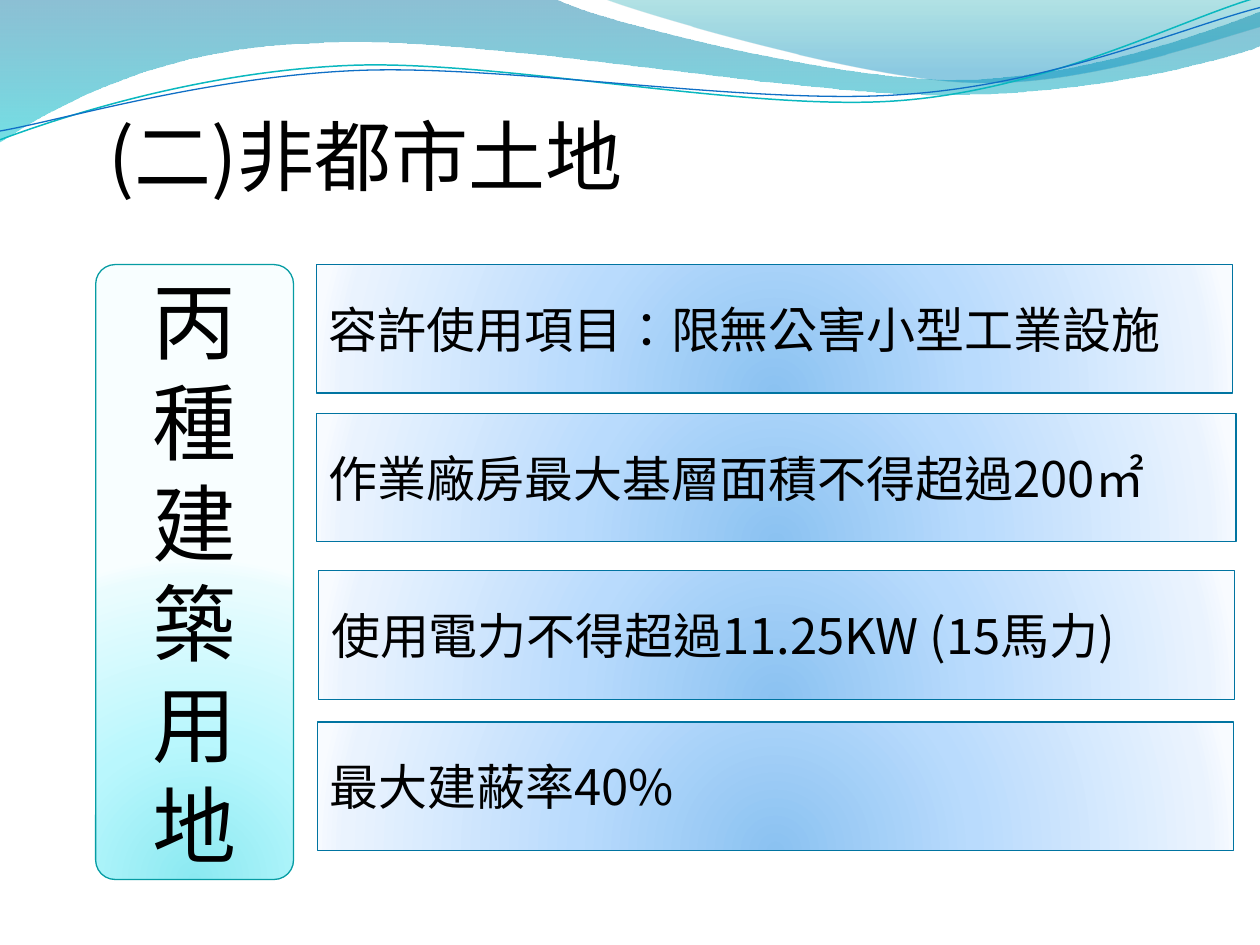
import pptx
import pptx.util
import pptx.oxml
import pptx.oxml.ns
import pptx.dml.color
import pptx.enum.lang
import pptx.enum.shapes
import pptx.enum.text
from lxml import etree

Inches = pptx.util.Inches
Pt = pptx.util.Pt
KIND = pptx.enum.shapes.MSO_SHAPE
ALIGN = pptx.enum.text.PP_ALIGN
ANCHOR = pptx.enum.text.MSO_ANCHOR
LANG = pptx.enum.lang.MSO_LANGUAGE_ID
RGB = pptx.dml.color.RGBColor.from_string
qn = pptx.oxml.ns.qn

FONT = "Noto Sans CJK SC"
HEX = {"text": "000000", "teal": "0AB8BF", "blue": "0F6FC6",
       "side": "069CA3", "bar": "0074A1"}
LINEAR = '<a:lin ang="5400000" scaled="0"/>'
GLOW = ('<a:path path="circle"><a:fillToRect l="50000" t="130000" '
        'r="50000" b="-30000"/></a:path>')


def shade(shape, stops, mode):
    """Fill with a gradient; each stop is position, colour, opacity in percent."""
    shape.fill.background()
    marks = "".join(
        f'<a:gs pos="{pos * 1000}"><a:srgbClr val="{tone}">'
        f'<a:alpha val="{alpha * 1000}"/></a:srgbClr></a:gs>'
        for pos, tone, alpha in stops)
    grad = pptx.oxml.parse_xml(
        '<a:gradFill xmlns:a="http://schemas.openxmlformats.org/drawingml/2006/main" '
        f'rotWithShape="1"><a:gsLst>{marks}</a:gsLst>{mode}</a:gradFill>')
    props = shape._element.spPr
    props.replace(props.find(qn("a:noFill")), grad)


def write(shape, text, size, align=ALIGN.LEFT, anchor=ANCHOR.MIDDLE):
    frame = shape.text_frame
    frame.word_wrap = True
    frame.vertical_anchor = anchor
    para = frame.paragraphs[0]
    para.alignment = align
    run = para.add_run()
    run.text = text
    run.font.size = Pt(size)
    run.font.name = FONT
    run.font.language_id = LANG.TRADITIONAL_CHINESE
    run.font.color.rgb = RGB(HEX["text"])
    east = etree.SubElement(run._r.get_or_add_rPr(), qn("a:ea"))
    east.set("typeface", FONT)


deck = pptx.Presentation()
deck.slide_width = Inches(10)
deck.slide_height = Inches(7.5)
slide = deck.slides.add_slide(deck.slide_layouts[6])
shapes = slide.shapes

# Waves: a pair is a straight step, six numbers are a cubic curve
waves = [
    {"nodes": [(0, 0), (4.4, -0.01), (4.76, 0.17, 6.64, 0.63, 7.58, 0.63),
               (8.53, 0.63, 9.58, 0.26, 10, 0.09), (10.01, 0.36),
               (9.83, 0.44, 8.7, 0.76, 7.46, 0.75),
               (6.22, 0.75, 3.82, 0.28, 2.57, 0.34),
               (1.29, 0.36, 0.46, 0.83, -0.01, 1.13)],
     "stops": [(0, "0074A1", 45), (100, "00C6CF", 55)]},
    {"nodes": [(4.79, -0.01), (5.09, 0.11, 6.82, 0.62, 7.69, 0.65),
               (8.56, 0.69, 9.61, 0.32, 10, 0.21), (10, 0)],
     "stops": [(0, "00A1A9", 30), (80, "008BBF", 45)]},
    {"nodes": [(0, 1.11), (0.48, 0.93, 1.58, 0.57, 2.77, 0.52),
               (3.95, 0.47, 5.93, 0.89, 7.13, 0.8),
               (8.33, 0.71, 9.38, 0.15, 9.98, -0.02)],
     "line": "teal", "width": 0.85},
    {"nodes": [(0, 1.04), (0.47, 0.96, 1.64, 0.61, 2.83, 0.56),
               (4.03, 0.51, 5.97, 0.84, 7.17, 0.75),
               (8.36, 0.67, 9.41, 0.21, 10, 0.06)],
     "line": "blue", "width": 0.75},
]
for wave in waves:
    start, *parts = wave["nodes"]
    dots = [(Inches(x), Inches(y)) for part in parts
            for x, y in zip(part[::2], part[1::2])]
    pen = shapes.build_freeform(Inches(start[0]), Inches(start[1]))
    pen.add_line_segments(dots, close="stops" in wave)
    curve = pen.convert_to_shape()
    curve.shadow.inherit = False

    # Join each three straight steps of a curve into one cubic step
    steps = iter(list(curve._element.spPr.iter(qn("a:lnTo"))))
    for part in parts:
        trio = [next(steps) for pair in part[::2]]
        if len(trio) == 3:
            cubic = etree.Element(qn("a:cubicBezTo"))
            trio[0].addprevious(cubic)
            for step in trio:
                cubic.append(step[0])
                step.getparent().remove(step)

    if "stops" in wave:
        shade(curve, wave["stops"], LINEAR)
        curve.line.fill.background()
    else:
        curve.fill.background()
        curve.line.color.rgb = RGB(HEX[wave["line"]])
        curve.line.width = Pt(wave["width"])

title = shapes.add_textbox(Inches(0.76), Inches(0.81), Inches(8.83), Inches(6.69))
write(title, "(二)非都市土地", 44, anchor=ANCHOR.TOP)
title.text_frame.paragraphs[0].space_before = Pt(8.8)

# Land class on the left, its four rules on the right
SPOTS = (0, 43, 93, 100)
AQUA = ("8BE9F1", "B9F7FD", "EAFCFE", "F8FEFF")
SKY = ("8BC2F1", "B9DBFD", "EAF3FE", "F8FBFF")
panels = [
    ("丙種建築用地", 0.76, 2.1, 1.57, 4.88),
    ("容許使用項目：限無公害小型工業設施", 2.51, 2.1, 7.27, 1.02),
    ("作業廠房最大基層面積不得超過200㎡", 2.51, 3.28, 7.3, 1.02),
    ("使用電力不得超過11.25KW (15馬力)", 2.53, 4.53, 7.27, 1.02),
    ("最大建蔽率40%", 2.52, 5.73, 7.27, 1.02),
]
for rank, (text, *box) in enumerate(panels):
    side = rank == 0
    kind = KIND.ROUNDED_RECTANGLE if side else KIND.RECTANGLE
    panel = shapes.add_shape(kind, *map(Inches, box))
    panel.shadow.inherit = False
    tones = AQUA if side else SKY
    shade(panel, [(pos, tone, 100) for pos, tone in zip(SPOTS, tones)], GLOW)
    panel.line.color.rgb = RGB(HEX["side" if side else "bar"])
    panel.line.width = Pt(0.75)
    if side:
        panel.adjustments[0] = 0.098
        write(panel, text, 48, align=ALIGN.CENTER)
    else:
        write(panel, text, 28)

deck.save("out.pptx")
